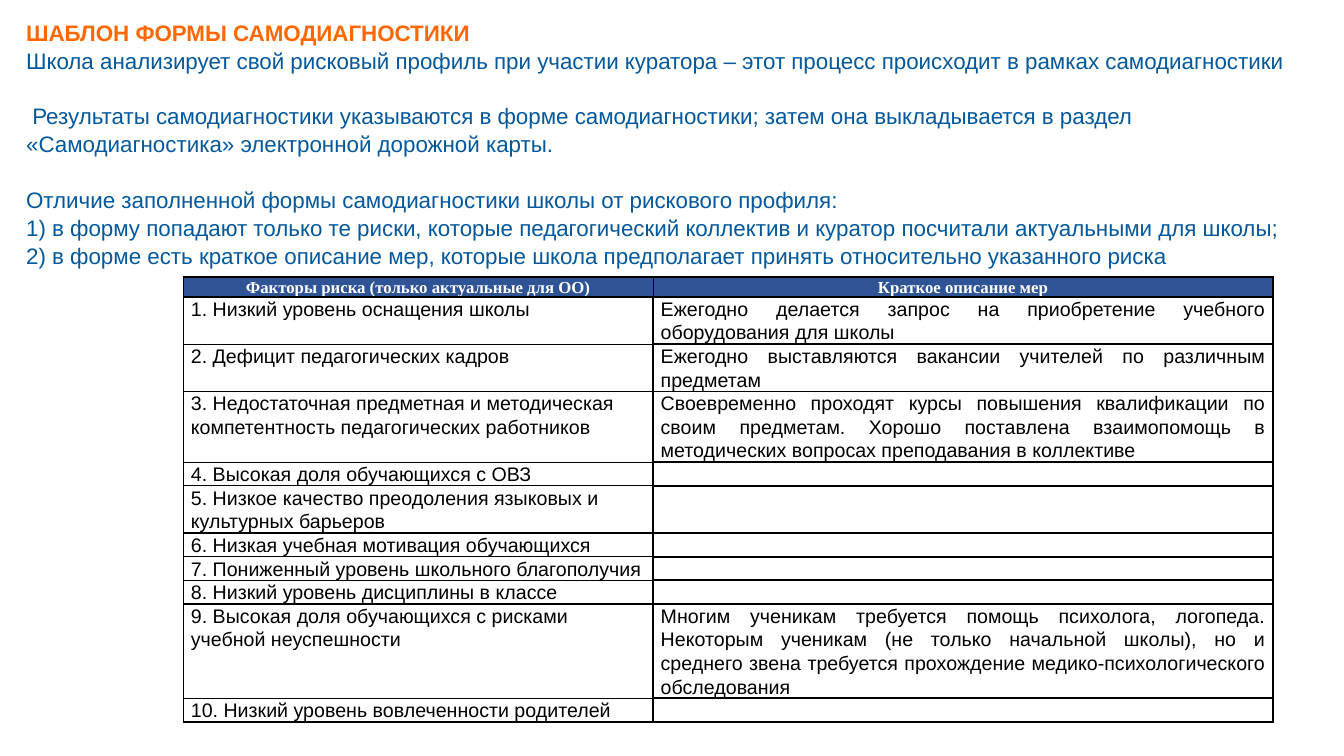
import pptx
import pptx.dml.color
import pptx.enum.text
import pptx.oxml
import pptx.oxml.ns
import pptx.util
from dataclasses import dataclass

Cm = pptx.util.Cm
Pt = pptx.util.Pt
Align = pptx.enum.text.PP_ALIGN
Anchor = pptx.enum.text.MSO_ANCHOR


@dataclass(frozen=True)
class Theme:
    orange: str = "FF6801"
    blue: str = "05589C"
    header_fill: str = "2F5496"
    white: str = "FFFFFF"
    black: str = "000000"
    font: str = "Arial"
    header_font: str = "Times New Roman"
    intro_size: float = 16
    header_size: float = 12
    cell_size: float = 14
    thin: float = 1
    thick: float = 1.5


THEME = Theme()
BLANK_LINE = 19.3
LINE_HEIGHT = 0.595
HEADER_HEIGHT = 0.5
COLUMN_WIDTHS = (11.84, 15.62)

INTRO = [
    ("Школа анализирует свой рисковый профиль при участии куратора – этот процесс "
     "происходит в рамках самодиагностики", 0),
    (" Результаты самодиагностики указываются в форме самодиагностики; затем она "
     "выкладывается в раздел «Самодиагностика» электронной дорожной карты.", BLANK_LINE),
    ("Отличие заполненной формы самодиагностики школы от рискового профиля:", BLANK_LINE),
    ("1) в форму попадают только те риски, которые педагогический коллектив и куратор "
     "посчитали актуальными для школы;", 0),
    ("2) в форме есть краткое описание мер, которые школа предполагает принять "
     "относительно указанного риска", 0),
]

HEADERS = ("Факторы риска (только актуальные для ОО)", "Краткое описание мер")

# Each entry: risk factor, measures, number of text lines in the row
RISKS = [
    ("Низкий уровень оснащения школы",
     "Ежегодно делается запрос на приобретение учебного оборудования для школы", 2),
    ("Дефицит педагогических кадров",
     "Ежегодно выставляются вакансии учителей по различным предметам", 2),
    ("Недостаточная предметная и методическая компетентность педагогических работников",
     "Своевременно проходят курсы повышения квалификации по своим предметам. Хорошо "
     "поставлена взаимопомощь в методических вопросах преподавания в коллективе", 3),
    ("Высокая доля обучающихся с ОВЗ", "", 1),
    ("Низкое качество преодоления языковых и культурных барьеров", "", 2),
    ("Низкая учебная мотивация обучающихся", "", 1),
    ("Пониженный уровень школьного благополучия", "", 1),
    ("Низкий уровень дисциплины в классе", "", 1),
    ("Высокая доля обучающихся с рисками учебной неуспешности",
     "Многим ученикам требуется помощь психолога, логопеда. Некоторым ученикам (не только "
     "начальной школы), но и среднего звена требуется прохождение "
     "медико-психологического обследования", 4),
    ("Низкий уровень вовлеченности родителей", "", 1),
]


def color(value):
    return pptx.dml.color.RGBColor.from_string(value)


def write(para, text, *, size, ink, font=THEME.font, bold=False,
          align=Align.LEFT, spacing=1.0, before=0):
    para.alignment = align
    para.line_spacing = spacing
    para.space_before = Pt(before)
    target = para.font
    if text:
        span = para.add_run()
        span.text = text
        target = span.font
    target.name = font
    target.size = Pt(size)
    target.bold = bold
    target.color.rgb = color(ink)


def set_borders(cell, left, right, top, bottom):
    """Draw the four cell edges with the given widths in points."""
    properties = cell._tc.get_or_add_tcPr()
    for side, width in zip("LRTB", (left, right, top, bottom)):
        properties.append(pptx.oxml.parse_xml(
            f'<a:ln{side} {pptx.oxml.ns.nsdecls("a")} w="{int(Pt(width))}">'
            f'<a:solidFill><a:srgbClr val="{THEME.black}"/></a:solidFill></a:ln{side}>'))


class SlideBuilder:
    def __init__(self, slide, theme):
        self.slide = slide
        self.theme = theme

    def add_intro(self, heading, paragraphs):
        theme = self.theme
        box = self.slide.shapes.add_textbox(Cm(0.41), Cm(0.41), Cm(33.1), Cm(6.4))
        box.fill.solid()
        box.fill.fore_color.rgb = color(theme.white)
        frame = box.text_frame
        frame.word_wrap = True
        frame.vertical_anchor = Anchor.MIDDLE
        write(frame.paragraphs[0], heading, size=theme.intro_size, ink=theme.orange,
              bold=True, spacing=1.05)
        for text, before in paragraphs:
            write(frame.add_paragraph(), text, size=theme.intro_size, ink=theme.blue,
                  spacing=1.05, before=before)

    def fill_cell(self, cell, text, *, fill, borders, anchor=Anchor.TOP, **style):
        cell.margin_left = cell.margin_right = Cm(0.19)
        cell.margin_top = cell.margin_bottom = 0
        cell.vertical_anchor = anchor
        set_borders(cell, *borders)
        cell.fill.solid()
        cell.fill.fore_color.rgb = color(fill)
        write(cell.text_frame.paragraphs[0], text, spacing=1.07, **style)

    def add_risk_table(self, headers, risks):
        theme = self.theme
        thin, thick = theme.thin, theme.thick
        heights = [HEADER_HEIGHT] + [lines * LINE_HEIGHT for *_, lines in risks]
        table = self.slide.shapes.add_table(
            len(heights), len(headers), Cm(4.62), Cm(6.98),
            Cm(sum(COLUMN_WIDTHS)), Cm(sum(heights))).table
        for column, width in zip(table.columns, COLUMN_WIDTHS):
            column.width = Cm(width)
        for row, height in zip(table.rows, heights):
            row.height = Cm(height)
        for index, text in enumerate(headers):
            self.fill_cell(table.cell(0, index), text, fill=theme.header_fill,
                           borders=(thin,) * 4, size=theme.header_size, ink=theme.white,
                           font=theme.header_font, bold=True, align=Align.CENTER)
        body = {"fill": theme.white, "size": theme.cell_size, "ink": theme.black}
        for number, (factor, measures, _) in enumerate(risks, 1):
            self.fill_cell(table.cell(number, 0), f"{number}. {factor}",
                           borders=(thin, thick, thin, thin), **body)
            self.fill_cell(table.cell(number, 1), measures, anchor=Anchor.MIDDLE,
                           borders=(thick, thin, thick, thick), align=Align.JUSTIFY, **body)


def main():
    deck = pptx.Presentation()
    deck.slide_width = Cm(33.87)
    deck.slide_height = Cm(19.05)
    page = SlideBuilder(deck.slides.add_slide(deck.slide_layouts[6]), THEME)
    page.add_risk_table(HEADERS, RISKS)
    page.add_intro("ШАБЛОН ФОРМЫ САМОДИАГНОСТИКИ", INTRO)
    deck.save("out.pptx")


if __name__ == "__main__":
    main()
